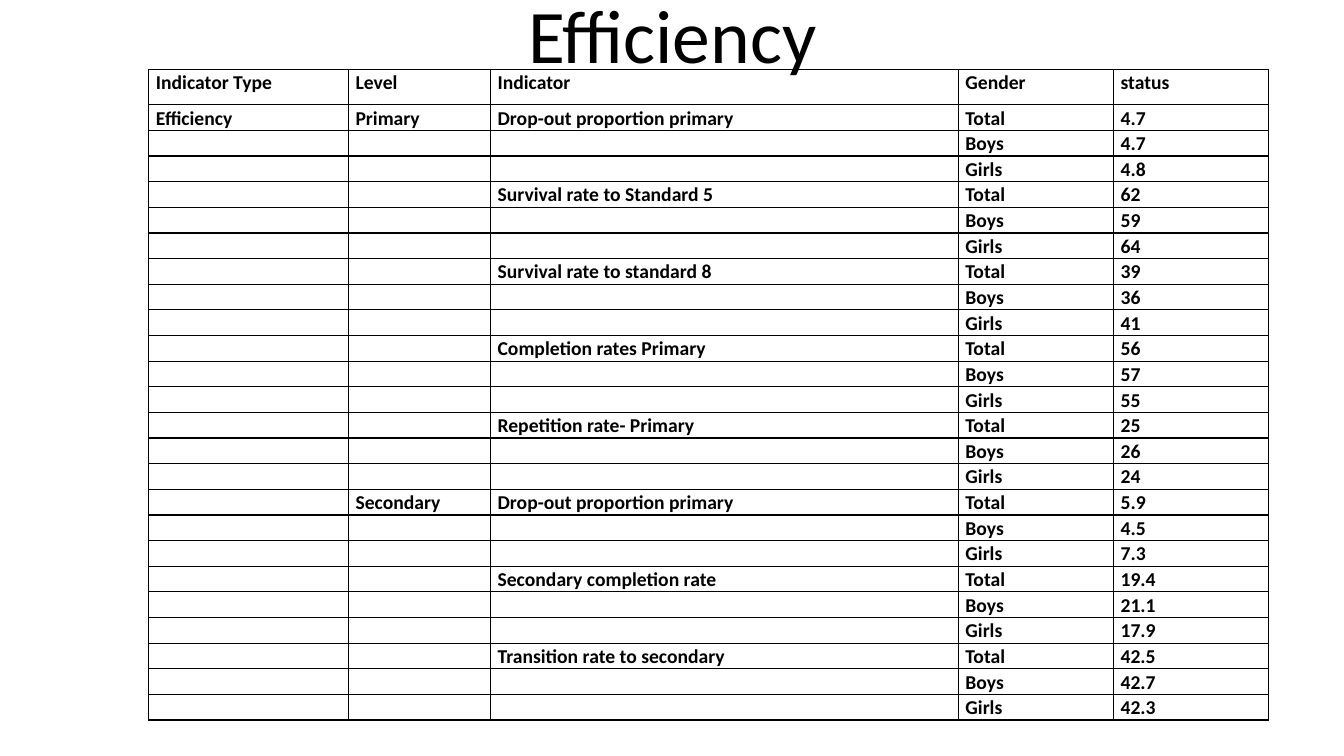
from lxml import etree
from pptx import Presentation
from pptx.dml.color import RGBColor
from pptx.enum.text import MSO_ANCHOR, PP_ALIGN
from pptx.oxml.ns import qn
from pptx.util import Cm, Pt

CENTER, LEFT = PP_ALIGN.CENTER, PP_ALIGN.LEFT
MIDDLE, TOP = MSO_ANCHOR.MIDDLE, MSO_ANCHOR.TOP
FONT = "Calibri"
BLACK = "000000"

HEADERS = ["Indicator Type", "Level", "Indicator", "Gender", "status"]
GENDERS = ["Total", "Boys", "Girls"]
# Type, level, indicator, then one status per gender
INDICATORS = [
    ("Efficiency", "Primary", "Drop-out proportion primary", ("4.7", "4.7", "4.8")),
    ("", "", "Survival rate to Standard 5", ("62", "59", "64")),
    ("", "", "Survival rate to standard 8", ("39", "36", "41")),
    ("", "", "Completion rates Primary", ("56", "57", "55")),
    ("", "", "Repetition rate- Primary", ("25", "26", "24")),
    ("", "Secondary", "Drop-out proportion primary", ("5.9", "4.5", "7.3")),
    ("", "", "Secondary completion rate", ("19.4", "21.1", "17.9")),
    ("", "", "Transition rate to secondary", ("42.5", "42.7", "42.3")),
]
COLUMN_WIDTHS = [5.03, 3.58, 11.79, 3.91, 3.91]
HEADER_HEIGHT = 0.89
CELL_SIZE = 14


def color(hex_value):
    return RGBColor.from_string(hex_value)


def write(p, text, size, bold, align, spacing):
    p.alignment = align
    p.line_spacing = spacing
    if not text:
        # An empty cell keeps the text size so its row stays low
        etree.SubElement(p._p, qn("a:endParaRPr"), sz=str(size * 100))
        return
    r = p.add_run()
    r.text = text
    r.font.name = FONT
    r.font.size = Pt(size)
    r.font.bold = bold
    r.font.color.rgb = color(BLACK)


def add_borders(cell, hex_value, width):
    tc_pr = cell._tc.get_or_add_tcPr()
    for side in ("L", "R", "T", "B"):
        ln = etree.SubElement(tc_pr, qn(f"a:ln{side}"), w=str(Pt(width)))
        fill = etree.SubElement(ln, qn("a:solidFill"))
        etree.SubElement(fill, qn("a:srgbClr"), val=hex_value)


def add_title(s, text, left, top, width, height):
    sp = s.shapes.add_textbox(Cm(left), Cm(top), Cm(width), Cm(height))
    tf = sp.text_frame
    tf.word_wrap = True
    tf.vertical_anchor = MIDDLE
    write(tf.paragraphs[0], text, 54, False, CENTER, 0.9)


def indicator_rows():
    rows = [HEADERS]
    for kind, level, indicator, statuses in INDICATORS:
        labels = [kind, level, indicator]
        for gender, status in zip(GENDERS, statuses):
            rows.append(labels + [gender, status])
            labels = ["", "", ""]
    return rows


def add_indicator_table(s, left, top, width, height):
    rows = indicator_rows()
    frame = s.shapes.add_table(len(rows), len(HEADERS), Cm(left), Cm(top),
                               Cm(width), Cm(height))
    table = frame.table
    table.first_row = False
    table.horz_banding = False

    # Columns share the width; body rows share the height below the header
    scale = width / sum(COLUMN_WIDTHS)
    for column, column_width in zip(table.columns, COLUMN_WIDTHS):
        column.width = Cm(column_width * scale)
    row_height = (height - HEADER_HEIGHT) / (len(rows) - 1)
    for i, row in enumerate(table.rows):
        row.height = Cm(row_height if i else HEADER_HEIGHT)

    # Cells
    for i, texts in enumerate(rows):
        for j, text in enumerate(texts):
            cell = table.cell(i, j)
            cell.margin_left = cell.margin_right = Cm(0.18)
            cell.margin_top = cell.margin_bottom = 0
            cell.vertical_anchor = TOP
            add_borders(cell, BLACK, 1)
            cell.fill.background()
            write(cell.text_frame.paragraphs[0], text, CELL_SIZE, True, LEFT, 1.07)


def main():
    prs = Presentation()
    prs.slide_width, prs.slide_height = Cm(33.87), Cm(19.05)
    s = prs.slides.add_slide(prs.slide_layouts[6])
    add_title(s, "Efficiency", 2.34, 0.43, 29.21, 1.12)
    add_indicator_table(s, 3.75, 1.75, 28.22, 16.4)
    prs.save("out.pptx")


if __name__ == "__main__":
    main()
